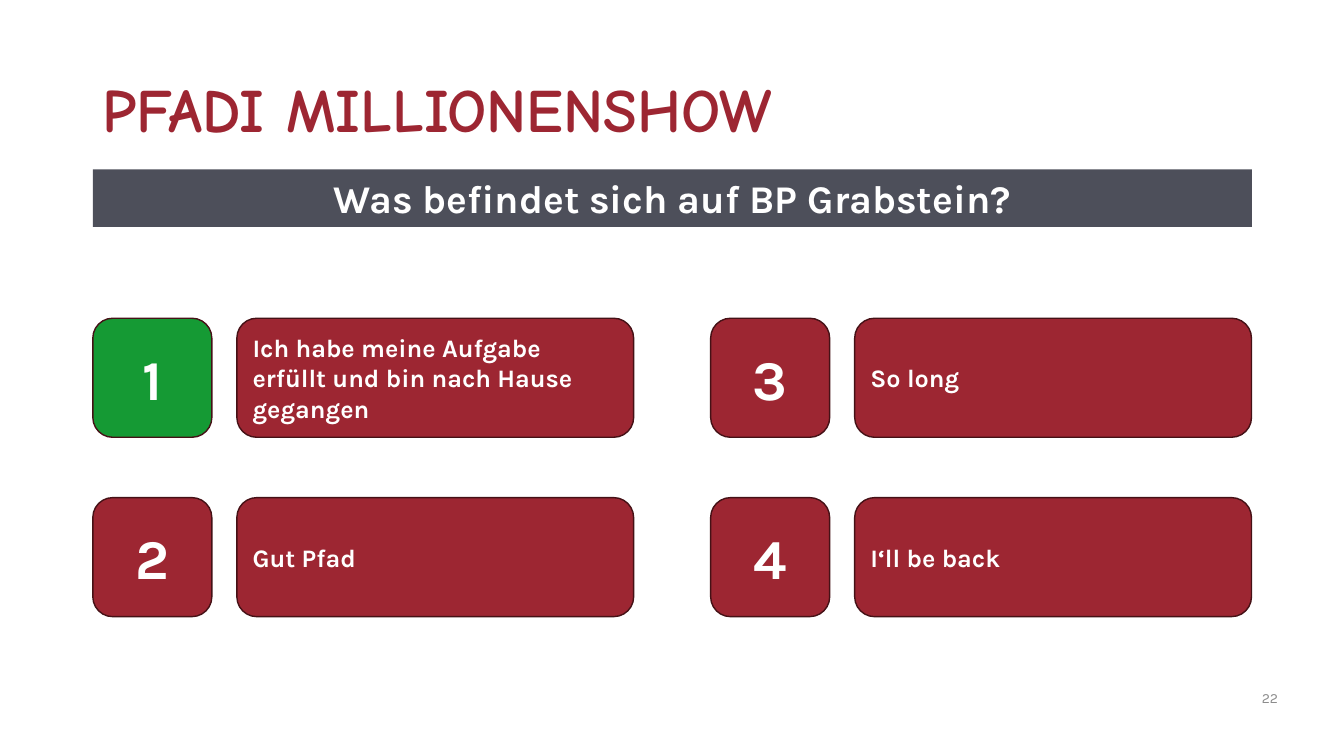
from dataclasses import dataclass

from pptx import Presentation
from pptx.dml.color import RGBColor
from pptx.enum.shapes import MSO_SHAPE as Kind
from pptx.enum.text import MSO_ANCHOR as Anchor, PP_ALIGN as Align
from pptx.shapes.autoshape import Shape
from pptx.util import Cm, Pt

RED, GREEN, GREY, EDGE = "9D2632", "159A34", "4D4F5A", "451116"
LEFT, TOP, WIDTH = 2.34, 8.02, 29.21
SIDE, WIDE, GAP = 3, 10, 0.63
STEP_X, STEP_Y = 15.57, 4.52


@dataclass
class Style:
    size: int
    color: str = "FFFFFF"
    font: str = "Karla"
    bold: bool = True
    align: Align = Align.LEFT
    anchor: Anchor = Anchor.MIDDLE


@dataclass
class Answer:
    text: str
    right: bool = False


HEAD = Style(44, RED, "Comic Neue")
PAGE = Style(10, "8C8C8C", bold=False)
QUERY = Style(28, align=Align.CENTER, anchor=Anchor.TOP)
DIGIT = Style(40, align=Align.CENTER)
REPLY = Style(18)

ANSWERS = [
    Answer("Ich habe meine Aufgabe erfüllt und bin nach Hause gegangen", True),
    Answer("Gut Pfad"),
    Answer("So long"),
    Answer("I‘ll be back"),
]


def paint(target, color: str) -> None:
    target.rgb = RGBColor.from_string(color)


def write(shape: Shape, text: str, style: Style) -> None:
    frame = shape.text_frame
    frame.word_wrap = True
    frame.vertical_anchor = style.anchor
    frame.text = text
    para = frame.paragraphs[0]
    para.alignment = style.align
    para.font.name = style.font
    para.font.size = Pt(style.size)
    para.font.bold = style.bold
    paint(para.font.color, style.color)


def add_label(slide, box: tuple, text: str, style: Style) -> Shape:
    label = slide.shapes.add_textbox(*map(Cm, box))
    write(label, text, style)
    return label


def add_panel(slide, kind: Kind, box: tuple, fill: str, text: str,
              style: Style) -> Shape:
    panel = slide.shapes.add_shape(kind, *map(Cm, box))
    panel.shadow.inherit = False
    panel.fill.solid()
    paint(panel.fill.fore_color, fill)
    panel.line.fill.background()
    write(panel, text, style)
    return panel


def add_tile(slide, box: tuple, fill: str, text: str, style: Style) -> None:
    tile = add_panel(slide, Kind.ROUNDED_RECTANGLE, box, fill, text, style)
    tile.line.width = Pt(1)
    paint(tile.line.color, EDGE)


def main() -> None:
    deck = Presentation()
    deck.slide_width, deck.slide_height = Cm(33.87), Cm(19.05)
    slide = deck.slides.add_slide(deck.slide_layouts[6])

    title = add_label(slide, (LEFT, 1, WIDTH, 3.68), "PFADI MILLIONENSHOW", HEAD)
    title.text_frame.paragraphs[0].line_spacing = 0.9
    add_label(slide, (31.55, 17.07, 2.32, 1.02), "22", PAGE)
    add_panel(slide, Kind.RECTANGLE, (LEFT, 4.27, WIDTH, 1.45), GREY,
              "Was befindet sich auf BP Grabstein?", QUERY)

    for index, answer in enumerate(ANSWERS):
        col, row = divmod(index, 2)
        x, y = LEFT + col * STEP_X, TOP + row * STEP_Y
        add_tile(slide, (x, y, SIDE, SIDE), GREEN if answer.right else RED,
                 str(index + 1), DIGIT)
        add_tile(slide, (x + SIDE + GAP, y, WIDE, SIDE), RED, answer.text, REPLY)

    deck.save("out.pptx")


if __name__ == "__main__":
    main()
